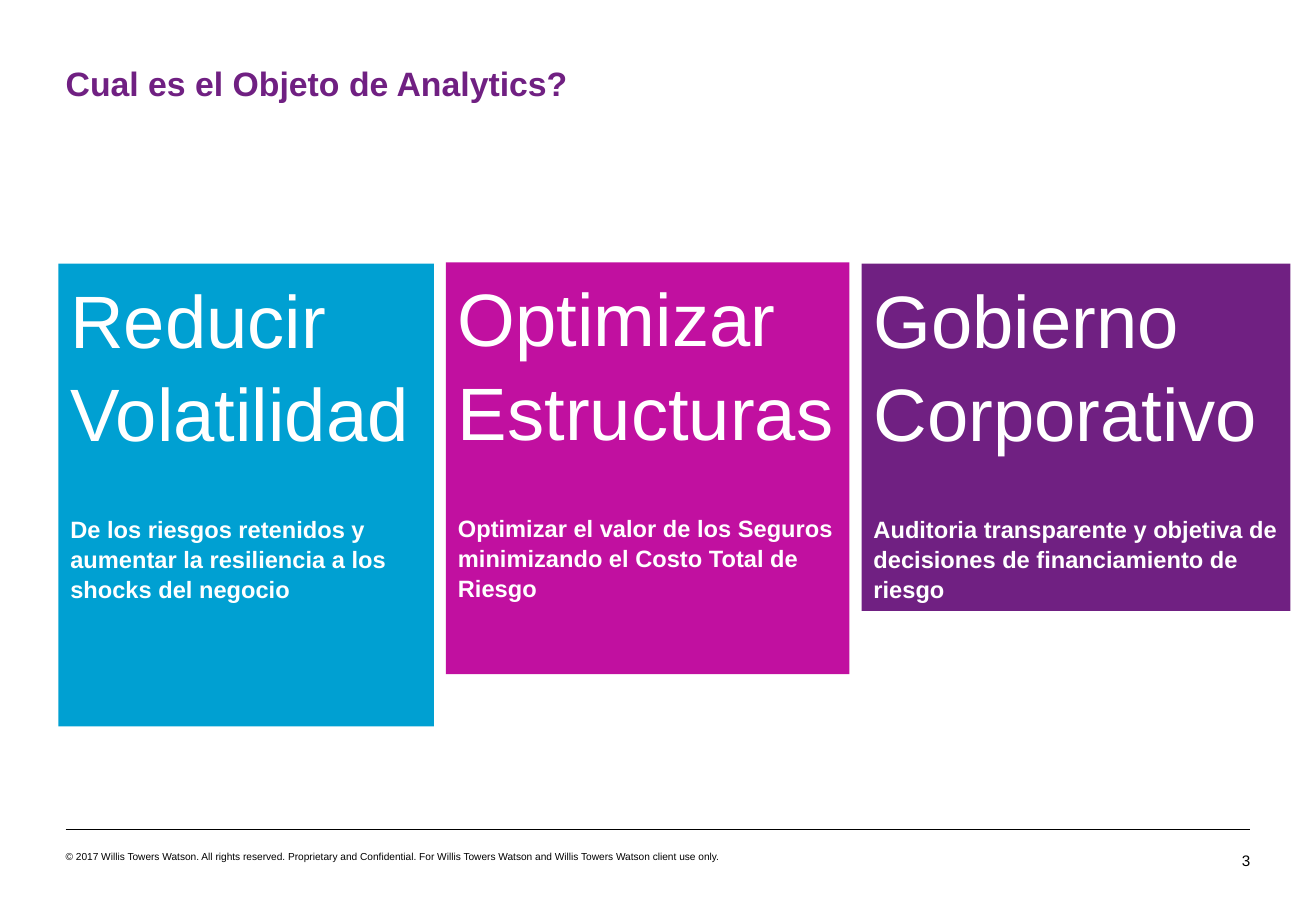
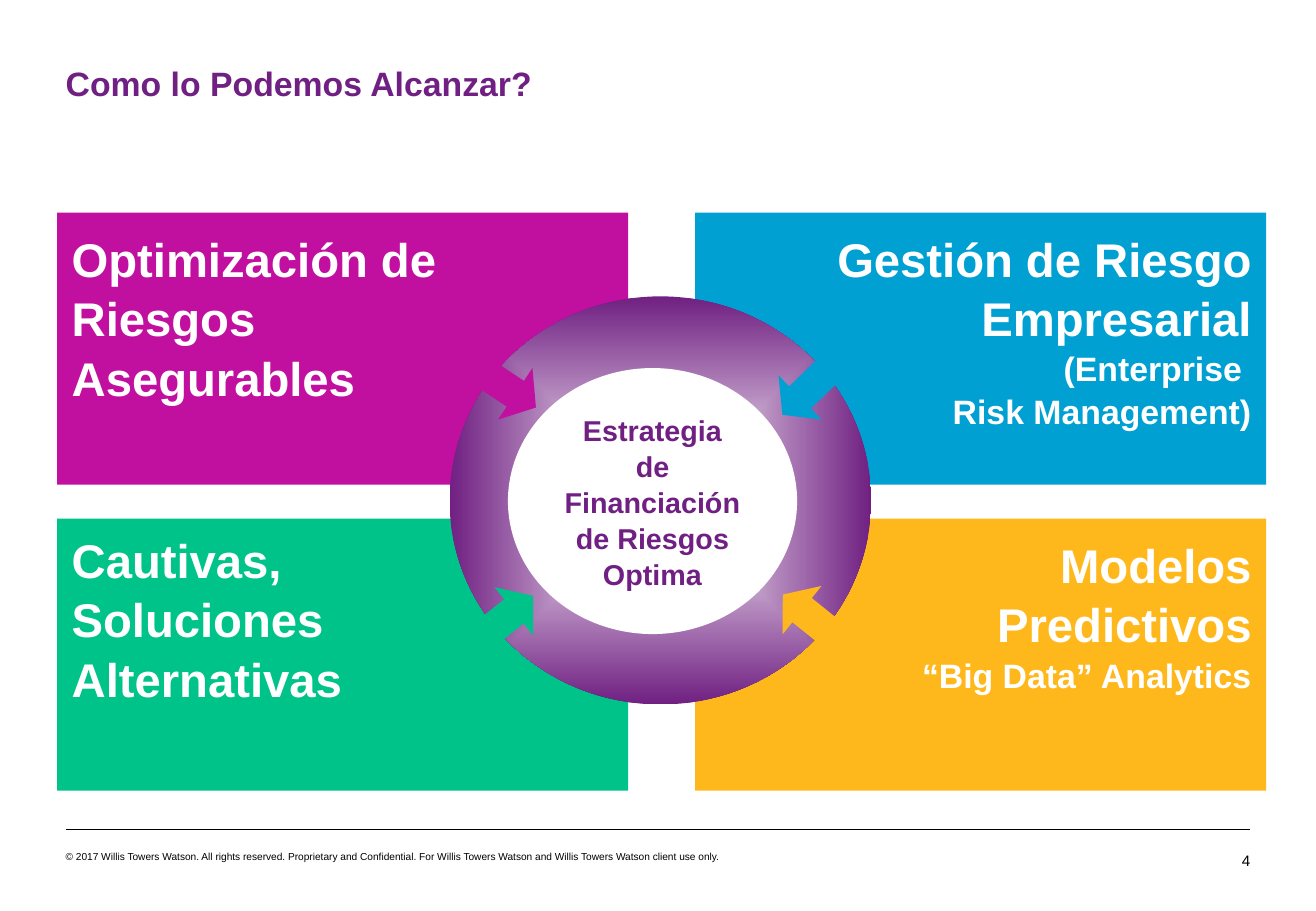
import dataclasses
import pptx
import pptx.dml.color
import pptx.enum.shapes
import pptx.enum.text
import pptx.oxml
import pptx.oxml.ns
import pptx.util

PX = 9144
SHAPE = pptx.enum.shapes.MSO_SHAPE
ANCHOR = pptx.enum.text.MSO_ANCHOR
ALIGN = pptx.enum.text.PP_ALIGN


@dataclasses.dataclass(frozen=True)
class Theme:
    """Colours, type sizes and page measures shared by the slides."""
    font: str = "Arial"
    purple: str = "702082"
    blue: str = "00A0D2"
    magenta: str = "C110A0"
    green: str = "00C389"
    yellow: str = "FFB81C"
    white: str = "FFFFFF"
    black: str = "000000"
    card_head: int = 44
    card_body: int = 14
    panel_head: int = 28
    panel_sub: int = 20
    title: int = 20
    hub: int = 17
    number: int = 9
    footer: int = 6
    left: int = 54
    right: int = 1029
    line_spacing: float = 1.05


THEME = Theme()
COPYRIGHT = ("© 2017 Willis Towers Watson. All rights reserved. Proprietary and Confidential. "
             "For Willis Towers Watson and Willis Towers Watson client use only.")


def px(*lengths):
    """Turn pixel lengths into EMU."""
    return [pptx.util.Emu(length * PX) for length in lengths]


def rgb(colour):
    """Return a colour object for a hex string."""
    return pptx.dml.color.RGBColor.from_string(colour)


def write(shape, lines, colour, align=ALIGN.LEFT, anchor=ANCHOR.TOP, insets=(10, 5, 10, 5)):
    """Fill a shape with lines of (text, size, bold, space before)."""
    frame = shape.text_frame
    frame.word_wrap = True
    frame.auto_size = pptx.enum.text.MSO_AUTO_SIZE.NONE
    frame.vertical_anchor = anchor
    frame.margin_left, frame.margin_top, frame.margin_right, frame.margin_bottom = px(*insets)
    frame.text = "\n".join(line[0] for line in lines)
    for para, (text, size, bold, before) in zip(frame.paragraphs, lines):
        para.alignment = align
        para.line_spacing = THEME.line_spacing
        para.space_before = pptx.util.Pt(before)
        for span in para.runs:
            span.font.name = THEME.font
            span.font.size = pptx.util.Pt(size)
            span.font.bold = bold
            span.font.color.rgb = rgb(colour)


def add_text(page, place, lines, colour, **style):
    """Add a text box."""
    write(page.shapes.add_textbox(*px(*place)), lines, colour, **style)


def add_block(page, kind, place, colour):
    """Add a flat preset shape without outline or shadow."""
    shape = page.shapes.add_shape(kind, *px(*place))
    shape.shadow.inherit = False
    shape.fill.solid()
    shape.fill.fore_color.rgb = rgb(colour)
    shape.line.fill.background()
    return shape


def add_page(deck, title, number):
    """Add a slide with its title, footer rule, copyright line and number."""
    page = deck.slides.add_slide(deck.slide_layouts[5])
    heading = page.shapes.title
    flush = (0, 0, 0, 0)
    width = THEME.right - THEME.left
    heading.left, heading.top, heading.width, heading.height = px(THEME.left, 50, width, 34)
    write(heading, [(title, THEME.title, True, 0)], THEME.purple, insets=flush)
    rule = page.shapes.add_connector(pptx.enum.shapes.MSO_CONNECTOR.STRAIGHT,
                                     *px(THEME.left, 683, THEME.right, 683))
    rule.line.color.rgb = rgb(THEME.black)
    rule.line.width = pptx.util.Pt(0.25)
    rule._element.spPr.append(pptx.oxml.parse_xml(
        f'<a:effectLst {pptx.oxml.ns.nsdecls("a")}/>'))
    add_text(page, (THEME.right - 45, 700, 45, 15), [(str(number), THEME.number, False, 0)],
             THEME.black, align=ALIGN.RIGHT, insets=flush)
    add_text(page, (THEME.left, 700, 625, 10), [(COPYRIGHT, THEME.footer, False, 0)],
             THEME.black, insets=flush)
    return page


def add_card(page, place, colour, heads, body):
    """Add a goal card with large heading lines and a bold explanation."""
    lines = [(head, THEME.card_head, False, 0) for head in heads]
    lines.append((body, THEME.card_body, True, 34))
    write(add_block(page, SHAPE.RECTANGLE, place, colour), lines, THEME.white)


def add_panel(page, place, colour, text_top, text_width, heads, subs, on_right):
    """Add a coloured panel with its text box against the outer side."""
    left, top, width, height = place
    add_block(page, SHAPE.RECTANGLE, place, colour)
    lines = [(head, THEME.panel_head, True, 0) for head in heads]
    lines += [(sub, THEME.panel_sub, True, 0) for sub in subs]
    text_left = left + width - text_width if on_right else left
    add_text(page, (text_left, text_top, text_width, 202), lines, THEME.white,
             align=ALIGN.RIGHT if on_right else ALIGN.LEFT,
             insets=(0, 12, 12, 10) if on_right else (12, 12, 0, 10))


def add_ring(page, place):
    """Add the ellipse shaded from a white centre to a purple rim."""
    ring = add_block(page, SHAPE.OVAL, place, THEME.purple)
    gradient = pptx.oxml.parse_xml(
        f'<a:gradFill {pptx.oxml.ns.nsdecls("a")} rotWithShape="1"><a:gsLst>'
        f'<a:gs pos="0"><a:srgbClr val="{THEME.white}"/></a:gs>'
        f'<a:gs pos="100000"><a:srgbClr val="{THEME.purple}"/></a:gs></a:gsLst>'
        '<a:path path="shape"><a:fillToRect l="50000" t="50000" r="50000" b="50000"/></a:path>'
        '</a:gradFill>')
    properties = ring._element.spPr
    properties.replace(properties.find(pptx.oxml.ns.qn("a:solidFill")), gradient)


def add_arrow(page, left, top, rotation, colour):
    """Add an arrow that points from a panel to the hub."""
    arrow = add_block(page, SHAPE.RIGHT_ARROW, (left, top, 83, 51), colour)
    arrow.adjustments[1] = 0.4
    arrow.rotation = rotation


def build_goals(deck):
    """Build the slide with the three goals."""
    page = add_page(deck, "Cual es el Objeto de Analytics?", 3)
    cards = [
        (217, 309, 381, THEME.blue, ["Reducir", "Volatilidad"],
         "De los riesgos retenidos y aumentar la resiliencia a los shocks del negocio"),
        (216, 332, 339, THEME.magenta, ["Optimizar", "Estructuras"],
         "Optimizar el valor de los Seguros minimizando el Costo Total de Riesgo"),
        (217, 353, 286, THEME.purple, ["Gobierno Corporativo"],
         "Auditoria transparente y objetiva de decisiones de financiamiento de riesgo"),
    ]
    left, gap = 48, 10
    for top, width, height, colour, heads, body in cards:
        add_card(page, (left, top, width, height), colour, heads, body)
        left += width + gap


def build_means(deck):
    """Build the slide with four panels around the strategy hub."""
    page = add_page(deck, "Como lo Podemos Alcanzar?", 4)
    panels = [
        (0, 1, THEME.green, 423, 398, ["Cautivas,", "Soluciones Alternativas"], []),
        (0, 0, THEME.magenta, 175, 359, ["Optimización de Riesgos Asegurables"], []),
        (1, 1, THEME.yellow, 427, 323, ["Modelos Predictivos"], ["“Big Data” Analytics"]),
        (1, 0, THEME.blue, 175, 470, ["Gestión de Riesgo Empresarial"],
         ["(Enterprise ", "Risk Management)"]),
    ]
    for column, row, colour, text_top, text_width, heads, subs in panels:
        place = (47 + 525 * column, 175 + 252 * row, 470, 224)
        add_panel(page, place, colour, text_top, text_width, heads, subs, column == 1)
    add_ring(page, (370, 244, 347, 336))
    hub = add_block(page, SHAPE.OVAL, (418, 303, 238, 219), THEME.white)
    write(hub, [("Estrategia de Financiación de Riesgos Optima", THEME.hub, True, 0)],
          THEME.purple, align=ALIGN.CENTER, anchor=ANCHOR.MIDDLE)
    for left, top, rotation, colour in [
            (635, 490, 218.8, THEME.yellow), (632, 287, 135.7, THEME.blue),
            (365, 491, 321.3, THEME.green), (365, 287, 33.7, THEME.magenta)]:
        add_arrow(page, left, top, rotation, colour)


def main():
    """Build and save the deck."""
    deck = pptx.Presentation()
    deck.slide_width, deck.slide_height = px(1083, 750)
    build_goals(deck)
    build_means(deck)
    deck.save("out.pptx")


if __name__ == "__main__":
    main()
